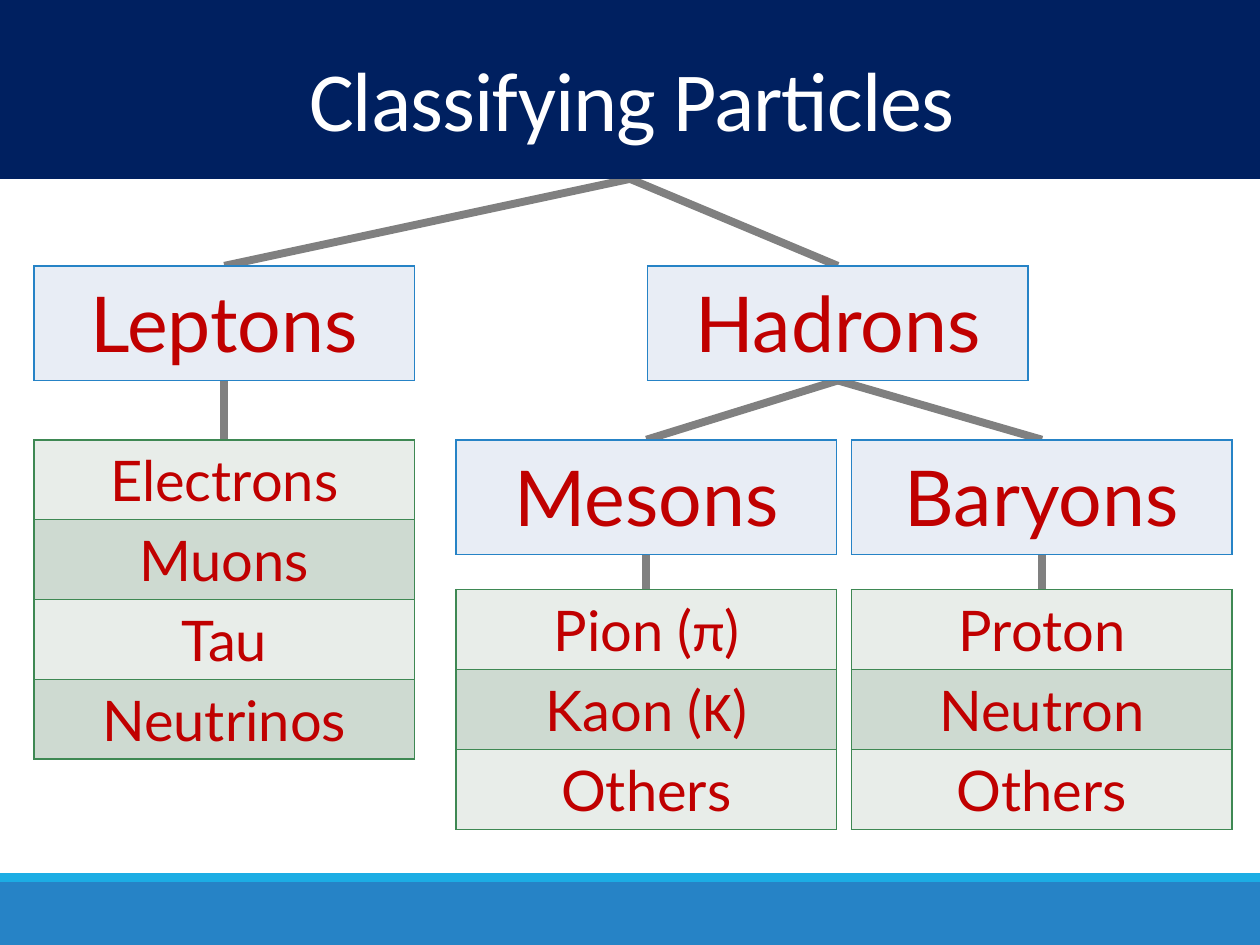
import itertools

import pptx
import pptx.dml.color
import pptx.enum.shapes
import pptx.enum.text
import pptx.oxml.ns
import pptx.util
from lxml import etree
from pptx.util import Inches

NAVY, WHITE, RED, GRAY = "002060", "FFFFFF", "C00000", "808080"
BLUE, SKY, GREEN = "2683C6", "1CADE4", "3E8853"
GROUP_FILL = "E8EDF5"
MEMBER_FILLS = ("E8EDE9", "CEDAD1")

SLIDE_WIDTH, TITLE_HEIGHT = 10, 1.42
BOX_WIDTH, GROUP_HEIGHT, MEMBER_HEIGHT = 3.02, 0.91, 0.63
FAMILY_TOP, SUBFAMILY_TOP, HADRON_LIST_TOP = 2.11, 3.49, 4.68
LEPTON_LEFT, HADRON_LEFT, MESON_LEFT, BARYON_LEFT = 0.27, 5.14, 3.62, 6.76


def color(hex_value):
    return pptx.dml.color.RGBColor.from_string(hex_value)


def is_greek(letter):
    return "\u0370" <= letter <= "\u03ff"


def write(frame, text, size, font="Lato", greek_font="Calibri", fill=RED,
          line_spacing=None, tracking=None):
    """Fill a text frame with one centred line, giving Greek letters their own font."""
    frame.word_wrap = True
    paragraph = frame.paragraphs[0]
    paragraph.alignment = pptx.enum.text.PP_ALIGN.CENTER
    if line_spacing:
        paragraph.line_spacing = line_spacing
    for greek, letters in itertools.groupby(text, is_greek):
        run = paragraph.add_run()
        run.text = "".join(letters)
        run.font.size = pptx.util.Pt(size)
        run.font.name = greek_font if greek else font
        run.font.color.rgb = color(fill)
        if tracking is not None:
            run.font._element.set("spc", str(int(tracking * 100)))


def add_borders(cell, line_color, width=1):
    properties = cell._tc.get_or_add_tcPr()
    for position, side in enumerate(("lnL", "lnR", "lnT", "lnB")):
        line = etree.Element(pptx.oxml.ns.qn("a:" + side), w=str(pptx.util.Pt(width)))
        solid = etree.SubElement(line, pptx.oxml.ns.qn("a:solidFill"))
        etree.SubElement(solid, pptx.oxml.ns.qn("a:srgbClr"), val=line_color)
        properties.insert(position, line)


class Diagram:
    def __init__(self, slide):
        self.shapes = slide.shapes
        self.middle = pptx.enum.text.MSO_ANCHOR.MIDDLE

    def band(self, top, height, fill):
        band = self.shapes.add_shape(
            pptx.enum.shapes.MSO_SHAPE.RECTANGLE,
            0, Inches(top), Inches(SLIDE_WIDTH), Inches(height))
        band.shadow.inherit = False
        band.fill.solid()
        band.fill.fore_color.rgb = color(fill)
        band.line.fill.background()
        return band

    def branch(self, start, end):
        branch = self.shapes.add_connector(
            pptx.enum.shapes.MSO_CONNECTOR.STRAIGHT,
            *(Inches(value) for value in (*start, *end)))
        branch.line.color.rgb = color(GRAY)
        branch.line.width = pptx.util.Pt(4.5)
        etree.SubElement(branch._element.spPr, pptx.oxml.ns.qn("a:effectLst"))
        return branch

    def title(self, text):
        box = self.shapes.add_textbox(
            Inches(0.03), Inches(0.42), Inches(9.97), Inches(0.84))
        box.text_frame.vertical_anchor = self.middle
        write(box.text_frame, text, 48, font="Calibri", fill=WHITE,
              line_spacing=0.85, tracking=-0.5)

    def table(self, left, top, labels, row_height, size, fills, border):
        table = self.shapes.add_table(
            len(labels), 1, Inches(left), Inches(top),
            Inches(BOX_WIDTH), Inches(row_height * len(labels))).table
        table.first_row = table.horz_banding = False
        for row, label, fill in zip(table.rows, labels, itertools.cycle(fills)):
            row.height = Inches(row_height)
            cell = row.cells[0]
            cell.vertical_anchor = self.middle
            cell.fill.solid()
            cell.fill.fore_color.rgb = color(fill)
            add_borders(cell, border)
            write(cell.text_frame, label, size)

    def group(self, left, top, name):
        self.table(left, top, [name], GROUP_HEIGHT, 44, [GROUP_FILL], BLUE)

    def members(self, left, top, names):
        self.table(left, top, names, MEMBER_HEIGHT, 32, MEMBER_FILLS, GREEN)


def main():
    presentation = pptx.Presentation()
    presentation.slide_width = Inches(SLIDE_WIDTH)
    presentation.slide_height = Inches(7.5)
    diagram = Diagram(presentation.slides.add_slide(presentation.slide_layouts[6]))

    diagram.band(7, 0.5, BLUE)
    diagram.band(6.93, 0.07, SKY)

    lepton_x, hadron_x, meson_x, baryon_x = (
        left + BOX_WIDTH / 2
        for left in (LEPTON_LEFT, HADRON_LEFT, MESON_LEFT, BARYON_LEFT))
    family_bottom = FAMILY_TOP + GROUP_HEIGHT
    subfamily_bottom = SUBFAMILY_TOP + GROUP_HEIGHT
    diagram.branch((lepton_x, family_bottom), (lepton_x, SUBFAMILY_TOP))
    for x in (meson_x, baryon_x):
        diagram.branch((hadron_x, family_bottom), (x, SUBFAMILY_TOP))
        diagram.branch((x, subfamily_bottom), (x, HADRON_LIST_TOP))
    title_branches = [
        diagram.branch((SLIDE_WIDTH / 2, TITLE_HEIGHT), (x, FAMILY_TOP))
        for x in (lepton_x, hadron_x)]

    # The title band covers the upper ends of its branches, so it comes after them.
    title_band = diagram.band(0, TITLE_HEIGHT, NAVY)
    for branch in title_branches:
        branch.begin_connect(title_band, 2)
    diagram.title("Classifying Particles")

    diagram.group(LEPTON_LEFT, FAMILY_TOP, "Leptons")
    diagram.group(HADRON_LEFT, FAMILY_TOP, "Hadrons")
    diagram.group(MESON_LEFT, SUBFAMILY_TOP, "Mesons")
    diagram.group(BARYON_LEFT, SUBFAMILY_TOP, "Baryons")
    diagram.members(LEPTON_LEFT, SUBFAMILY_TOP,
                    ["Electrons", "Muons", "Tau", "Neutrinos"])
    diagram.members(MESON_LEFT, HADRON_LIST_TOP, ["Pion (π)", "Kaon (Κ)", "Others"])
    diagram.members(BARYON_LEFT, HADRON_LIST_TOP, ["Proton", "Neutron", "Others"])

    presentation.save("out.pptx")


if __name__ == "__main__":
    main()
